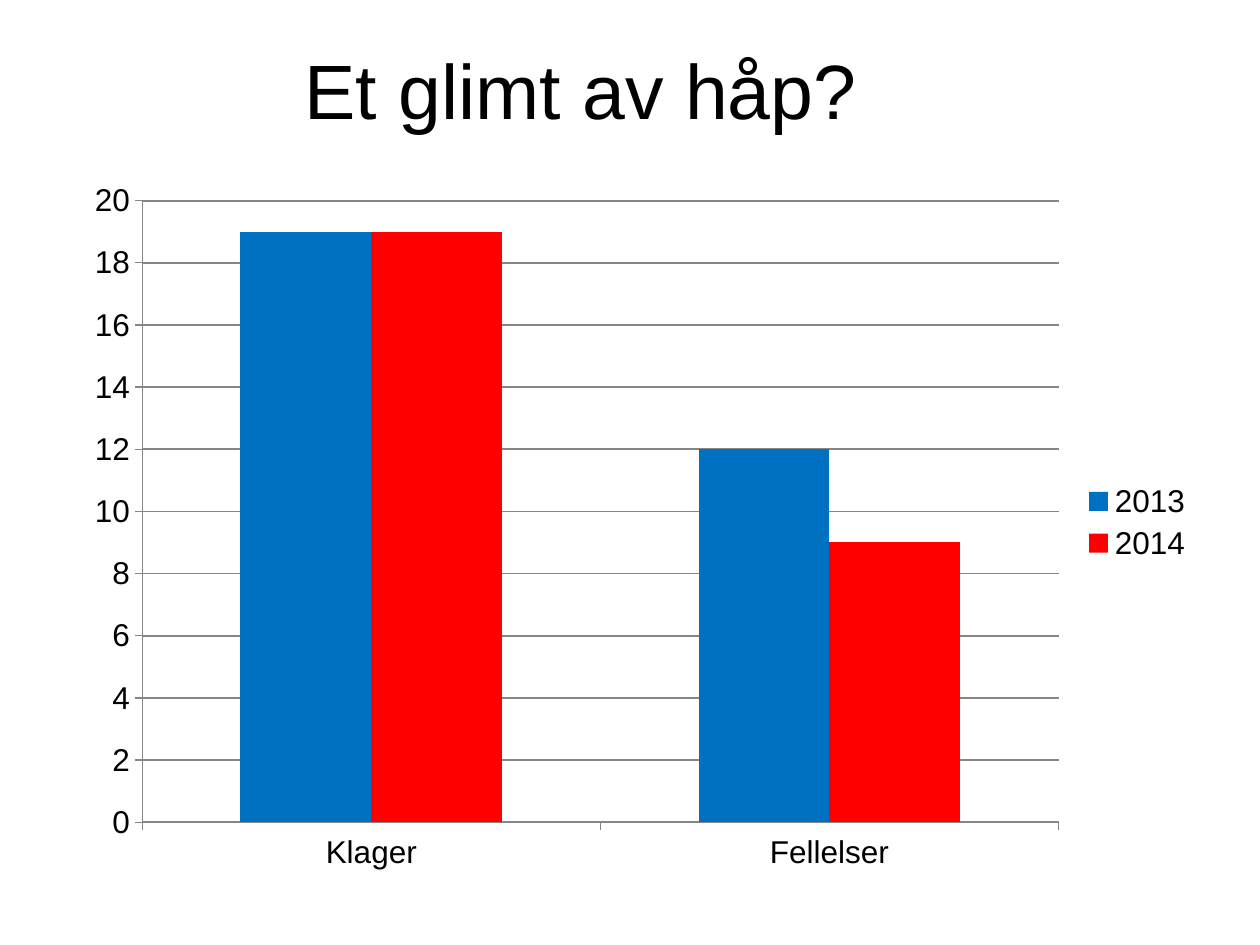
from dataclasses import dataclass

from pptx import Presentation
from pptx.chart.chart import Chart
from pptx.chart.data import CategoryChartData
from pptx.dml.color import RGBColor
from pptx.enum.chart import XL_CHART_TYPE, XL_LEGEND_POSITION, XL_TICK_MARK
from pptx.oxml import parse_xml
from pptx.oxml.ns import nsdecls, qn
from pptx.util import Inches, Pt


@dataclass(frozen=True)
class Year:
    name: str
    counts: tuple[int, ...]
    color: str


CATEGORIES = ("Klager", "Fellelser")
YEARS = (
    Year("2013", (19, 12), "0070C0"),
    Year("2014", (19, 9), "FF0000"),
)
BLACK, GRAY = "000000", "868686"
PLOT_FRAME = {"x": 0.06, "y": 0.05, "w": 0.81, "h": 0.87}


def color(value: str) -> RGBColor:
    return RGBColor.from_string(value)


def style_font(font, size: float, name: str = "Arial") -> None:
    font.name = name
    font.size = Pt(size)
    font.color.rgb = color(BLACK)


def style_line(line, width: float) -> None:
    line.color.rgb = color(GRAY)
    line.width = Pt(width)


def place_plot(chart: Chart) -> None:
    plot_area = chart._chartSpace.find(qn("c:chart")).find(qn("c:plotArea"))
    for layout in plot_area.findall(qn("c:layout")):
        plot_area.remove(layout)
    edges = "".join(f'<c:{edge}Mode val="edge"/>' for edge in "xy")
    frame = "".join(f'<c:{key} val="{val}"/>' for key, val in PLOT_FRAME.items())
    plot_area.insert(0, parse_xml(
        f'<c:layout {nsdecls("c")}><c:manualLayout>'
        f'<c:layoutTarget val="inner"/>{edges}{frame}'
        "</c:manualLayout></c:layout>"
    ))


def add_complaints_chart(slide) -> None:
    complaints = CategoryChartData(number_format="General")
    complaints.categories = CATEGORIES
    for year in YEARS:
        complaints.add_series(year.name, year.counts)
    chart = slide.shapes.add_chart(
        XL_CHART_TYPE.COLUMN_CLUSTERED,
        Inches(0.59), Inches(1.31), Inches(8.98), Inches(5.67), complaints,
    ).chart
    style_font(chart.font, 18, "Cambria")
    chart.has_title = False

    columns = chart.plots[0]
    columns.gap_width = 150
    columns.overlap = 0
    columns.vary_by_categories = False
    for series, year in zip(columns.series, YEARS):
        series.format.fill.solid()
        series.format.fill.fore_color.rgb = color(year.color)

    for axis in (chart.category_axis, chart.value_axis):
        style_font(axis.tick_labels.font, 18)
        style_line(axis.format.line, 0.75)
        axis.major_tick_mark = XL_TICK_MARK.OUTSIDE
        axis.minor_tick_mark = XL_TICK_MARK.NONE

    counts = chart.value_axis
    counts.minimum_scale = 0
    counts.maximum_scale = 20
    counts.major_unit = 2
    counts.has_major_gridlines = True
    style_line(counts.major_gridlines.format.line, 1)

    chart.has_legend = True
    chart.legend.position = XL_LEGEND_POSITION.RIGHT
    chart.legend.include_in_layout = False
    style_font(chart.legend.font, 18)
    place_plot(chart)


def add_heading(slide, text: str) -> None:
    heading = slide.shapes.add_textbox(
        Inches(2.32), Inches(0.29), Inches(4.63), Inches(1.14)
    ).text_frame
    heading.word_wrap = False
    heading.text = text
    style_font(heading.paragraphs[0].runs[0].font, 44)


def main() -> None:
    presentation = Presentation()
    presentation.slide_width = Inches(10)
    presentation.slide_height = Inches(7.5)
    slide = presentation.slides.add_slide(presentation.slide_layouts[6])
    add_complaints_chart(slide)
    add_heading(slide, "Et glimt av håp?")
    presentation.save("out.pptx")


if __name__ == "__main__":
    main()
